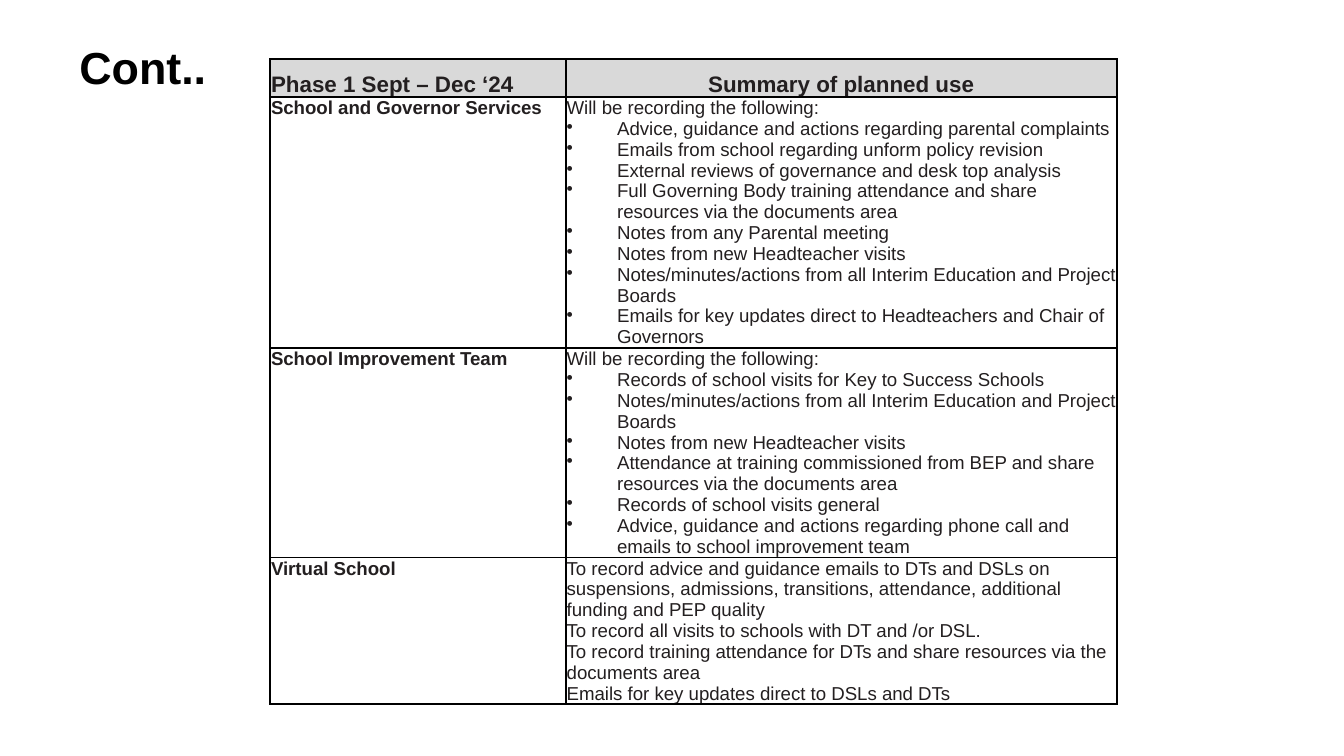
from lxml.etree import SubElement
from pptx import Presentation
from pptx.dml.color import RGBColor
from pptx.enum.text import MSO_ANCHOR, PP_ALIGN
from pptx.oxml.ns import qn
from pptx.util import Inches, Pt

COLORS = {"title": "000000", "border": "000000", "text": "231F20", "header": "D9D9D9"}
FONT = "Arial"
COLUMN_WIDTHS = (2.2, 4.1)
CELL_MARGIN = Pt(0.5)
BULLET_INDENT = Pt(27)
HEADINGS = ("Phase 1 Sept – Dec ‘24", "Summary of planned use")
BULLET = "• "
TEAMS = [
    ("School and Governor Services", 1.86, [
        "Will be recording the following:",
        "• Advice, guidance and actions regarding parental complaints",
        "• Emails from school regarding unform policy revision",
        "• External reviews of governance and desk top analysis",
        "• Full Governing Body training attendance and share resources via the documents area",
        "• Notes from any Parental meeting",
        "• Notes from new Headteacher visits",
        "• Notes/minutes/actions from all Interim Education and Project Boards",
        "• Emails for key updates direct to Headteachers and Chair of Governors",
    ]),
    ("School Improvement Team", 1.55, [
        "Will be recording the following:",
        "• Records of school visits for Key to Success Schools",
        "• Notes/minutes/actions from all Interim Education and Project Boards",
        "• Notes from new Headteacher visits",
        "• Attendance at training commissioned from BEP and share resources via the documents area",
        "• Records of school visits general",
        "• Advice, guidance and actions regarding phone call and emails to school improvement team",
    ]),
    ("Virtual School", 1.08, [
        "To record advice and guidance emails to DTs and DSLs on suspensions, admissions, "
        "transitions, attendance, additional funding and PEP quality",
        "To record all visits to schools with DT and /or DSL.",
        "To record training attendance for DTs and share resources via the documents area",
        "Emails for key updates direct to DSLs and DTs",
    ]),
]


def style_font(font, size, color, bold):
    """Set the typeface, size, colour and weight of a font."""
    font.name, font.size, font.bold = FONT, Pt(size), bold
    font.color.rgb = RGBColor.from_string(COLORS[color])


def add_bullet(para):
    """Give a paragraph a hanging bullet."""
    properties = para._p.get_or_add_pPr()
    properties.set("marL", str(BULLET_INDENT))
    properties.set("indent", str(-BULLET_INDENT))
    SubElement(properties, qn("a:buChar"), char=BULLET.strip())


def add_borders(cell):
    """Draw a thin line on all four sides of a cell."""
    properties = cell._tc.get_or_add_tcPr()
    for side in ("lnL", "lnR", "lnT", "lnB"):
        line = SubElement(properties, qn(f"a:{side}"), w=str(Pt(1)))
        fill = SubElement(line, qn("a:solidFill"))
        SubElement(fill, qn("a:srgbClr"), val=COLORS["border"])


def fill_cell(cell, lines, size, bold, align=PP_ALIGN.LEFT, header=False):
    """Write lines into a bordered cell."""
    cell.margin_left = cell.margin_right = cell.margin_top = CELL_MARGIN
    cell.margin_bottom = 0
    cell.vertical_anchor = MSO_ANCHOR.BOTTOM if header else MSO_ANCHOR.TOP
    add_borders(cell)
    if header:
        cell.fill.solid()
        cell.fill.fore_color.rgb = RGBColor.from_string(COLORS["header"])
    else:
        cell.fill.background()
    cell.text_frame.text = "\n".join(line.removeprefix(BULLET) for line in lines)
    for para, line in zip(cell.text_frame.paragraphs, lines):
        para.alignment = align
        if line.startswith(BULLET):
            add_bullet(para)
        for span in para.runs:
            style_font(span.font, size, "text", bold)


def add_grid(page, left, top, heights):
    """Add an unbanded table with the shared column widths and return it."""
    table = page.shapes.add_table(
        len(heights), len(COLUMN_WIDTHS), Inches(left), Inches(top),
        Inches(sum(COLUMN_WIDTHS)), Inches(sum(heights))).table
    table.first_row = table.horz_banding = False
    for column, width in zip(table.columns, COLUMN_WIDTHS):
        column.width = Inches(width)
    for row, height in zip(table.rows, heights):
        row.height = Inches(height)
    return table


def add_title(page, left, top, width, height):
    """Place and format the slide title."""
    title = page.shapes.title
    title.left, title.top = Inches(left), Inches(top)
    title.width, title.height = Inches(width), Inches(height)
    frame = title.text_frame
    frame.text = "Cont.."
    frame.vertical_anchor = MSO_ANCHOR.MIDDLE
    frame.margin_left = frame.margin_right = Inches(0.09)
    frame.margin_top = frame.margin_bottom = Inches(0.04)
    para = frame.paragraphs[0]
    para.alignment = PP_ALIGN.LEFT
    style_font(para.runs[0].font, 24, "title", True)


def add_header(page, left, top, height):
    """Add the heading row as its own table."""
    table = add_grid(page, left, top, [height])
    for column, (heading, align) in enumerate(zip(HEADINGS, (PP_ALIGN.LEFT, PP_ALIGN.CENTER))):
        fill_cell(table.cell(0, column), [heading], 12, True, align, header=True)


def add_teams(page, left, top):
    """Add the table of teams and their planned use."""
    table = add_grid(page, left, top, [height for _, height, _ in TEAMS])
    for row, (team, _, lines) in enumerate(TEAMS):
        fill_cell(table.cell(row, 0), [team], 10, True)
        fill_cell(table.cell(row, 1), lines, 10, False)


def main():
    """Build the slide and save the deck."""
    deck = Presentation()
    deck.slide_width = Inches(10)
    deck.slide_height = deck.slide_width * 9 // 16
    page = deck.slides.add_slide(deck.slide_layouts[5])
    left, top, header_height = 2.01, 0.44, 0.28
    add_title(page, 0.5, 0.23, 9, 0.53)
    add_header(page, left, top, header_height)
    add_teams(page, left, top + header_height)
    deck.save("out.pptx")


if __name__ == "__main__":
    main()
